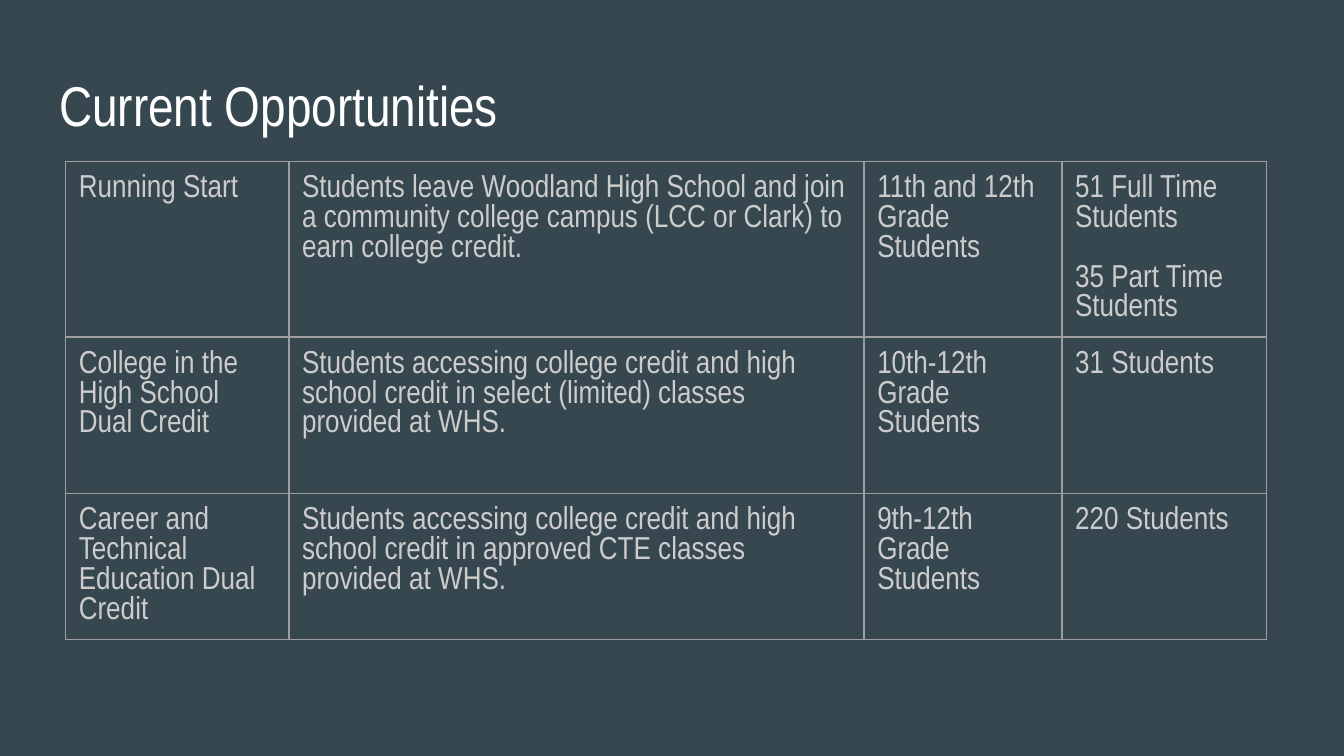
from pptx import Presentation
from pptx.dml.color import RGBColor
from pptx.enum.text import MSO_ANCHOR, PP_ALIGN
from pptx.oxml import parse_xml
from pptx.oxml.ns import nsdecls
from pptx.util import Cm, Pt

FONT = "Arial Narrow"
INSET = Cm(0.25)
GRID_COLOR = "9E9E9E"


def format_text(paragraph, size, color):
    paragraph.alignment = PP_ALIGN.LEFT
    for run in paragraph.runs:
        run.font.name = FONT
        run.font.size = Pt(size)
        run.font.color.rgb = RGBColor.from_string(color)


def set_borders(cell):
    properties = cell._tc.get_or_add_tcPr()
    for side in ("lnL", "lnR", "lnT", "lnB"):
        properties.append(parse_xml(
            f'<a:{side} {nsdecls("a")} w="{Pt(0.75)}"><a:solidFill>'
            f'<a:srgbClr val="{GRID_COLOR}"/></a:solidFill></a:{side}>'))


prs = Presentation()
prs.slide_width, prs.slide_height = Cm(25.4), Cm(14.29)
slide = prs.slides.add_slide(prs.slide_layouts[5])
slide.background.fill.solid()
slide.background.fill.fore_color.rgb = RGBColor.from_string("37474F")

# Title
title = slide.shapes.title
title.left, title.top, title.width, title.height = Cm(0.87), Cm(1.25), Cm(23.67), Cm(1.6)
title_frame = title.text_frame
title_frame.text = "Current Opportunities"
title_frame.vertical_anchor = MSO_ANCHOR.BOTTOM
title_frame.margin_left = title_frame.margin_right = INSET
title_frame.margin_top = title_frame.margin_bottom = INSET
format_text(title_frame.paragraphs[0], 30, "FFFFFF")

# Programs: name, description, grades, enrollment
programs = [
    ("Running Start",
     "Students leave Woodland High School and join a community college campus "
     "(LCC or Clark) to earn college credit.",
     "11th and 12th Grade Students",
     "51 Full Time Students\n35 Part Time\nStudents"),
    ("College in the High School Dual Credit",
     "Students accessing college credit and high school credit in select "
     "(limited) classes provided at WHS.",
     "10th-12th Grade Students",
     "31 Students"),
    ("Career and Technical Education Dual Credit",
     "Students accessing college credit and high school credit in approved CTE "
     "classes provided at WHS.",
     "9th-12th Grade Students",
     "220 Students"),
]
column_widths = [4.22, 10.87, 3.74, 3.86]
row_heights = [3.32, 2.96, 2.76]

program_table = slide.shapes.add_table(
    len(programs), len(column_widths), Cm(1.24), Cm(3.05),
    Cm(sum(column_widths)), Cm(sum(row_heights))).table
program_table.first_row = program_table.horz_banding = False
for column, width in zip(program_table.columns, column_widths):
    column.width = Cm(width)

for row, height, program in zip(program_table.rows, row_heights, programs):
    row.height = Cm(height)
    for cell, content in zip(row.cells, program):
        cell.text_frame.text = content
        cell.margin_left = cell.margin_right = INSET
        cell.margin_top = cell.margin_bottom = INSET
        set_borders(cell)
        cell.fill.background()
        for paragraph in cell.text_frame.paragraphs:
            format_text(paragraph, 17, "CCCCCC")

# Part-time count stands one line below the full-time count
program_table.cell(0, 3).text_frame.paragraphs[1].space_before = Pt(16)

prs.save("out.pptx")
